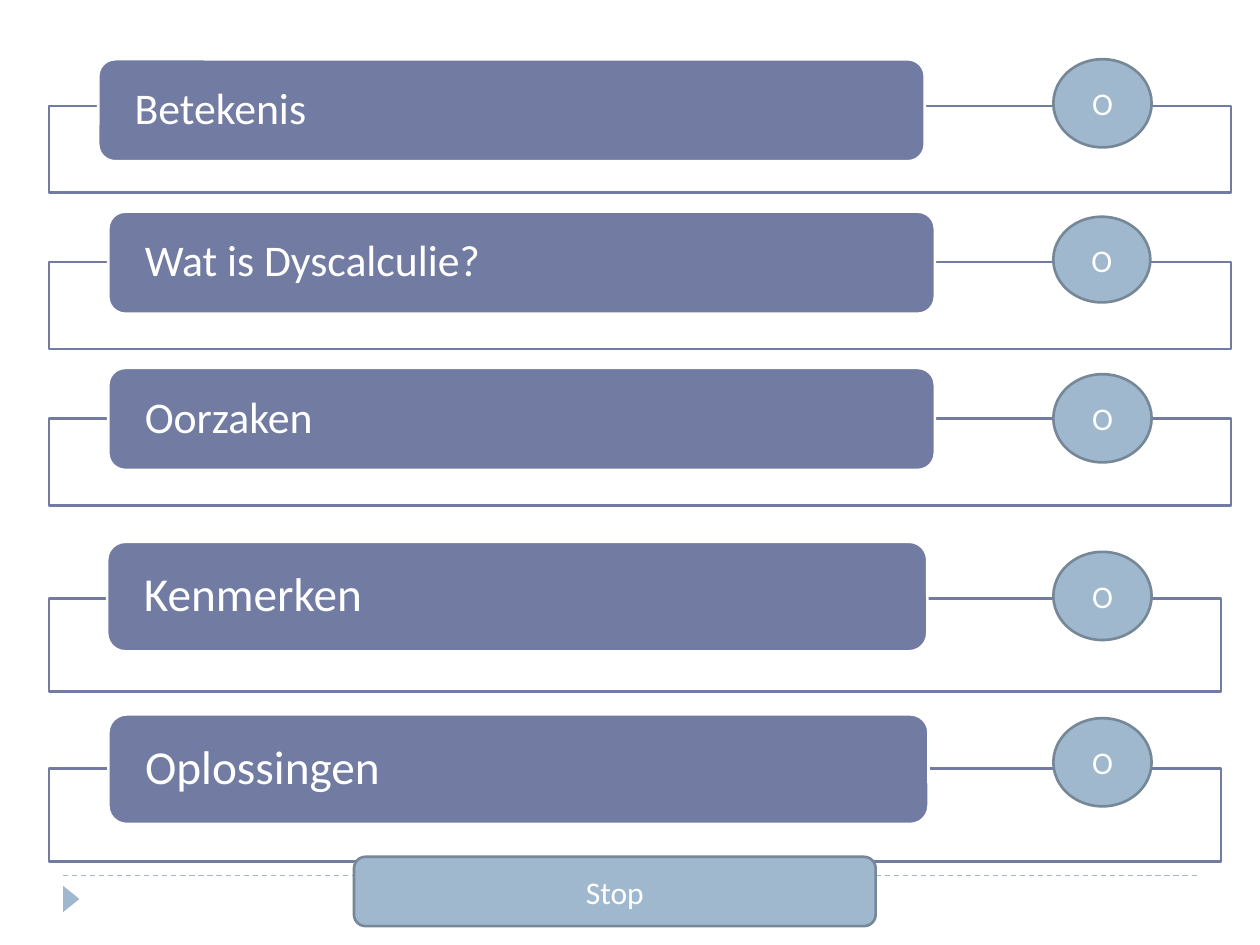
"""Build a menu slide with five framed topics, round buttons and a stop button."""
from dataclasses import dataclass
from typing import Optional

from lxml.etree import SubElement
from pptx import Presentation
from pptx.dml.color import RGBColor
from pptx.enum.dml import MSO_LINE
from pptx.enum.shapes import MSO_CONNECTOR, MSO_SHAPE as SHAPE
from pptx.enum.text import MSO_ANCHOR, PP_ALIGN
from pptx.oxml.ns import qn
from pptx.util import Inches, Pt

WHITE = RGBColor(0xFF, 0xFF, 0xFF)
INDIGO = RGBColor(0x72, 0x7C, 0xA3)
BLUE = RGBColor(0x9F, 0xB8, 0xCD)
SLATE = RGBColor(0x76, 0x88, 0x98)


@dataclass(frozen=True)
class Box:
    left: float
    top: float
    width: float
    height: float

    def emu(self) -> list:
        return [Inches(v) for v in (self.left, self.top, self.width, self.height)]


@dataclass(frozen=True)
class Style:
    frame_width: float
    frame_height: float
    bar_width: float
    bar_height: float
    size: int


@dataclass(frozen=True)
class Topic:
    text: str
    style: Style
    frame_top: float
    bar_left: float
    bar_top: float
    button: Box


UPPER = Style(9.38, 0.69, 6.56, 0.81, 25)
LOWER = Style(9.3, 0.74, 6.51, 0.87, 27)
TOPICS = [
    Topic("Betekenis", UPPER, 0.84, 0.78, 0.47, Box(8.36, 0.47, 0.78, 0.7)),
    Topic("Wat is Dyscalculie?", UPPER, 2.08, 0.86, 1.68, Box(8.36, 1.72, 0.77, 0.68)),
    Topic("Oorzaken", UPPER, 3.32, 0.86, 2.92, Box(8.36, 2.97, 0.78, 0.7)),
    Topic("Kenmerken", LOWER, 4.75, 0.85, 4.3, Box(8.36, 4.38, 0.78, 0.7)),
    Topic("Oplossingen", LOWER, 6.1, 0.86, 5.67, Box(8.36, 5.7, 0.78, 0.7)),
]
FRAME_LEFT = 0.39
BAR_TEXT = {"margin_left": Inches(0.25), "margin_right": Inches(0.25),
            "margin_top": 0, "margin_bottom": 0}


def add_box(s, kind: SHAPE, box: Box, fill: RGBColor, line: Optional[RGBColor]):
    sp = s.shapes.add_shape(kind, *box.emu())
    sp.shadow.inherit = False
    sp.fill.solid()
    sp.fill.fore_color.rgb = fill
    if line is None:
        sp.line.fill.background()
    else:
        sp.line.color.rgb = line
        sp.line.width = Pt(1.5)
    return sp


def set_text(sp, text: str, size: int, align: PP_ALIGN, frame_format: dict) -> None:
    tf = sp.text_frame
    for name, value in {"word_wrap": True, "vertical_anchor": MSO_ANCHOR.MIDDLE,
                        **frame_format}.items():
        setattr(tf, name, value)
    p = tf.paragraphs[0]
    p.alignment = align
    r = p.add_run()
    r.text = text
    for name, value in {"name": "Calibri", "size": Pt(size)}.items():
        setattr(r.font, name, value)
    r.font.color.rgb = WHITE


def add_button(s, kind: SHAPE, box: Box, text: str) -> None:
    sp = add_box(s, kind, box, BLUE, SLATE)
    set_text(sp, text, 18, PP_ALIGN.CENTER, {})


def add_topic(s, topic: Topic) -> None:
    st = topic.style
    frame = add_box(s, SHAPE.RECTANGLE,
                    Box(FRAME_LEFT, topic.frame_top, st.frame_width, st.frame_height),
                    WHITE, INDIGO)
    color = frame.fill._xPr.find(qn("a:solidFill"))[0]
    SubElement(color, qn("a:alpha"), val="90000")
    bar = add_box(s, SHAPE.ROUNDED_RECTANGLE,
                  Box(topic.bar_left, topic.bar_top, st.bar_width, st.bar_height),
                  INDIGO, WHITE)
    set_text(bar, topic.text, st.size, PP_ALIGN.LEFT, BAR_TEXT)
    bar.text_frame.paragraphs[0].line_spacing = 0.9
    add_button(s, SHAPE.OVAL, topic.button, "O")


def add_footer(s) -> None:
    rule = s.shapes.add_connector(MSO_CONNECTOR.STRAIGHT, Inches(0.5), Inches(6.95),
                                  Inches(9.5), Inches(6.95))
    rule.line.color.rgb = BLUE
    rule.line.width = Pt(0.75)
    rule.line.dash_style = MSO_LINE.DASH
    SubElement(rule._element.spPr, qn("a:effectLst"))
    marker = add_box(s, SHAPE.ISOSCELES_TRIANGLE, Box(0.46, 7.07, 0.21, 0.13), BLUE, None)
    marker.rotation = 90


def main() -> None:
    prs = Presentation()
    prs.slide_width, prs.slide_height = Inches(10), Inches(7.5)
    s = prs.slides.add_slide(prs.slide_layouts[6])
    add_footer(s)
    for topic in TOPICS:
        add_topic(s, topic)
    add_button(s, SHAPE.ROUNDED_RECTANGLE, Box(2.81, 6.8, 4.14, 0.55), "Stop")
    prs.save("out.pptx")


if __name__ == "__main__":
    main()
